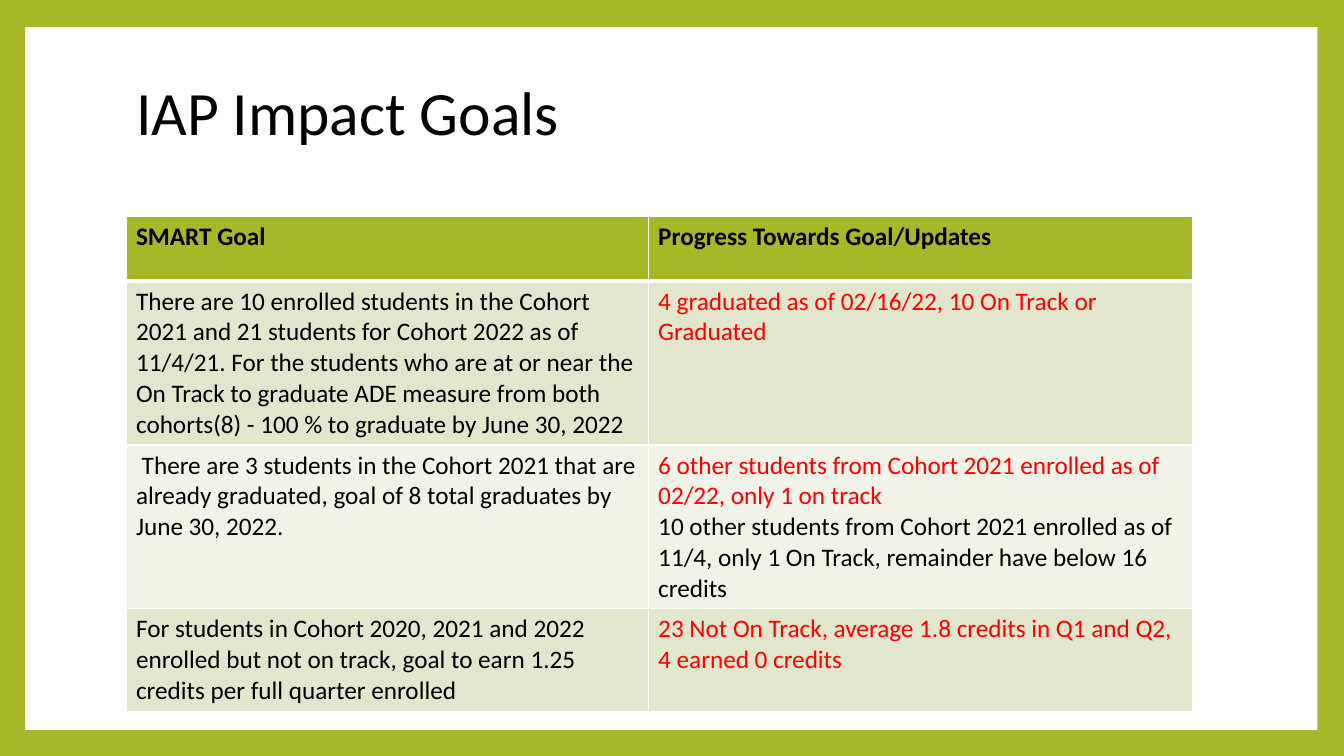
from lxml import etree
from pptx import Presentation
from pptx import util as u
from pptx.dml import color
from pptx.enum import shapes, text
from pptx.oxml import ns

GREEN, WHITE, BLACK, RED = "A6B727", "FFFFFF", "000000", "FF0000"
BANDS = ("E1E6CD", "F1F3E8")
COLUMN_WIDTHS = (373, 389)
ROW_HEIGHTS = (46, 117, 117, 73)

HEADINGS = ("SMART Goal", "Progress Towards Goal/Updates")
GOALS = [
    (
        [("There are 10 enrolled students in the Cohort 2021 and 21 students for "
          "Cohort 2022 as of 11/4/21. For the students who are at or near the On Track "
          "to graduate ADE measure from both cohorts(8) - 100 % to graduate by "
          "June 30, 2022", BLACK)],
        [("4 graduated as of 02/16/22, 10 On Track or Graduated", RED)],
    ),
    (
        [(" There are 3 students in the Cohort 2021 that are already graduated, "
          "goal of 8 total graduates by June 30, 2022.", BLACK)],
        [("6 other students from Cohort 2021 enrolled as of 02/22, only 1 on track", RED),
         ("10 other students from Cohort 2021 enrolled as of 11/4, only 1 On Track, "
          "remainder have below 16 credits", BLACK)],
    ),
    (
        [("For students in Cohort 2020, 2021 and 2022 enrolled but not on track, "
          "goal to earn 1.25 credits per full quarter enrolled", BLACK)],
        [("23 Not On Track, average 1.8 credits in Q1 and Q2, 4 earned 0 credits", RED)],
    ),
]


def paint(fill, value):
    fill.solid()
    fill.fore_color.rgb = color.RGBColor.from_string(value)


def style(para, size, value, bold=False):
    for span in para.runs:
        span.font.name = "Calibri"
        span.font.size = u.Pt(size)
        span.font.bold = bold
        paint(span.font.fill, value)


def set_borders(cell, widths):
    properties = cell._tc.get_or_add_tcPr()
    for position, (side, width) in enumerate(widths.items()):
        line = etree.Element(ns.qn(f"a:ln{side}"), w=str(u.Pt(width)))
        fill = etree.SubElement(line, ns.qn("a:solidFill"))
        etree.SubElement(fill, ns.qn("a:srgbClr"), val=WHITE)
        properties.insert(position, line)


def add_frame(page, left, top, width, height):
    paint(page.background.fill, GREEN)
    panel = page.shapes.add_shape(
        shapes.MSO_SHAPE.RECTANGLE, u.Pt(left), u.Pt(top), u.Pt(width), u.Pt(height))
    panel.shadow.inherit = False
    paint(panel.fill, WHITE)
    panel.line.fill.background()
    page.shapes._spTree.insert(2, panel._element)


def add_title(page, left, top, width, height):
    title = page.shapes.title
    title.left, title.top = u.Pt(left), u.Pt(top)
    title.width, title.height = u.Pt(width), u.Pt(height)
    frame = title.text_frame
    frame.text = "IAP Impact Goals"
    frame.auto_size = text.MSO_AUTO_SIZE.NONE
    frame.vertical_anchor = text.MSO_ANCHOR.MIDDLE
    para = frame.paragraphs[0]
    para.alignment = text.PP_ALIGN.LEFT
    para.line_spacing = 0.9
    style(para, 44, BLACK)


def fill_cell(cell, paragraphs, background, bold, top_line, bottom_line):
    cell.text_frame.text = "\n".join(words for words, _ in paragraphs)
    for para, (_, value) in zip(cell.text_frame.paragraphs, paragraphs):
        style(para, 18, value, bold)
    paint(cell.fill, background)
    set_borders(cell, {"L": 1, "R": 1, "T": top_line, "B": bottom_line})


def add_goals(page, left, top):
    rows = [[[(heading, BLACK)] for heading in HEADINGS], *GOALS]
    table = page.shapes.add_table(
        len(rows), len(HEADINGS), u.Pt(left), u.Pt(top),
        u.Pt(sum(COLUMN_WIDTHS)), u.Pt(sum(ROW_HEIGHTS))).table
    for column, width in zip(table.columns, COLUMN_WIDTHS):
        column.width = u.Pt(width)
    for index, (row, height) in enumerate(zip(rows, ROW_HEIGHTS)):
        table.rows[index].height = u.Pt(height)
        header = index == 0
        background = GREEN if header else BANDS[(index - 1) % 2]
        for number, paragraphs in enumerate(row):
            fill_cell(table.cell(index, number), paragraphs, background, header,
                      3 if index == 1 else 1, 3 if header else 1)


def main():
    deck = Presentation()
    deck.slide_width, deck.slide_height = u.Pt(960), u.Pt(540)
    page = deck.slides.add_slide(deck.slide_layouts[5])
    add_frame(page, 18, 19.4, 923, 502)
    add_title(page, 90, 29.5, 777.6, 106.5)
    add_goals(page, 90, 154.8)
    deck.save("out.pptx")


if __name__ == "__main__":
    main()
